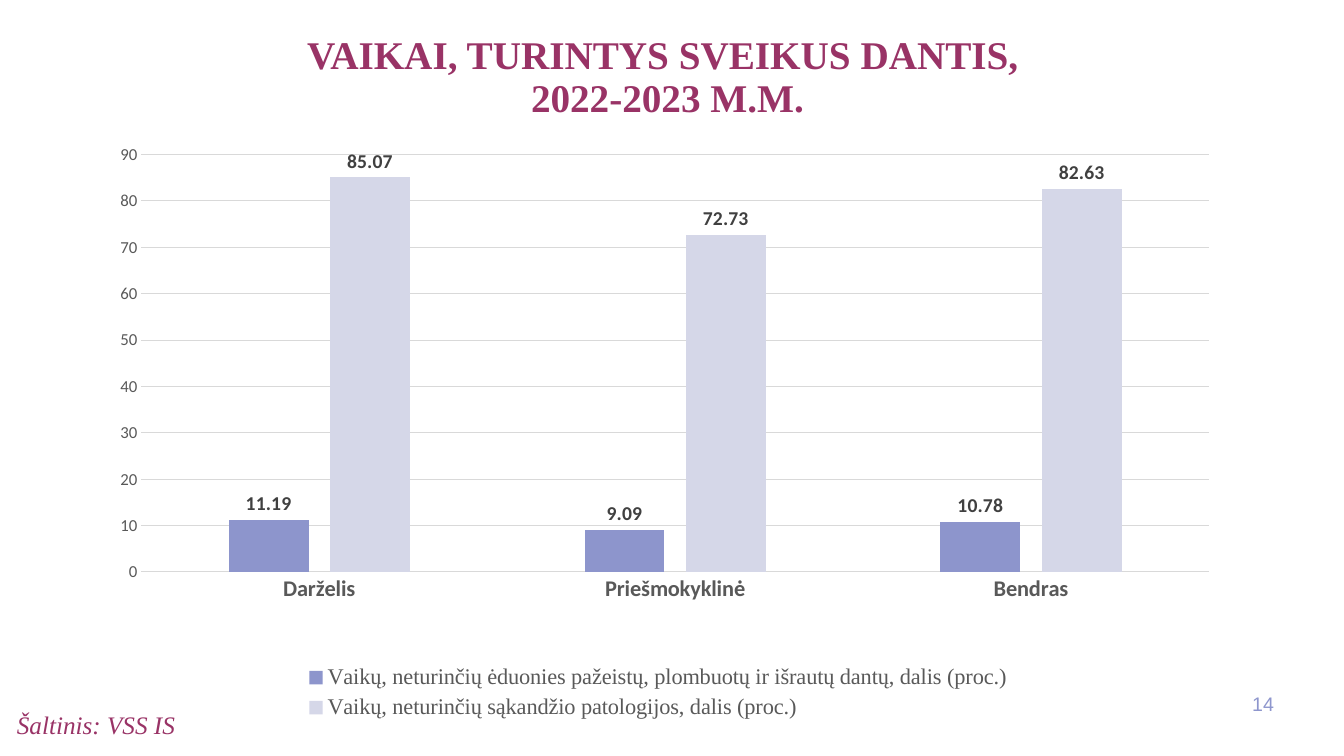
"""Build the slide on children with healthy teeth."""
from lxml import etree
from pptx import Presentation, util as u
from pptx.chart.data import CategoryChartData
from pptx.dml.color import RGBColor
from pptx.enum import chart as ch, text
from pptx.oxml import ns

PX = 914400 / 100.8
COLORS = {"plum": "993366", "periwinkle": "8E96CD", "bar": "8D95CC", "pale": "D5D7E8",
          "grid": "D9D9D9", "grey": "595959", "dark": "404040", "black": "000000"}
SERIF = "Times New Roman"
CATEGORIES = ["Darželis", "Priešmokyklinė", "Bendras"]
SERIES = [
    ("Vaikų, neturinčių ėduonies pažeistų, plombuotų ir išrautų dantų, dalis (proc.)",
     [11.19, 9.09, 10.78], "bar"),
    ("Vaikų, neturinčių sąkandžio patologijos, dalis (proc.)",
     [85.07, 72.73, 82.63], "pale"),
]


def px(n):
    """Turn pixels into EMU."""
    return u.Emu(round(n * PX))


def color(key):
    """Look up a named colour."""
    return RGBColor.from_string(COLORS[key])


def set_font(font, size, key, **fmt):
    """Apply size, colour and other format values to a font."""
    for name, value in {"size": u.Pt(size), **fmt}.items():
        setattr(font, name, value)
    font.color.rgb = color(key)


def set_line(line, key):
    """Give a chart line its colour and width."""
    line.color.rgb = color(key)
    line.width = u.Pt(0.75)


def write(sp, words, align, anchor, size, key, **fmt):
    """Fill a text shape with one formatted paragraph."""
    tf = sp.text_frame
    tf.word_wrap = True
    tf.auto_size = text.MSO_AUTO_SIZE.NONE
    tf.vertical_anchor = anchor
    tf.text = words
    p = tf.paragraphs[0]
    p.alignment = align
    for r in p.runs:
        set_font(r.font, size, key, **fmt)
    return p


def add_title(s, words, x, y, w, h):
    """Place and fill the title placeholder."""
    sp = s.shapes.title
    sp.left, sp.top, sp.width, sp.height = map(px, (x, y, w, h))
    p = write(sp, words, text.PP_ALIGN.CENTER, text.MSO_ANCHOR.TOP, 28, "plum",
              name=SERIF, bold=True)
    p.line_spacing = 0.9


def add_label(s, box, *args, **fmt):
    """Add a text box with one line."""
    write(s.shapes.add_textbox(*map(px, box)), *args, **fmt)


def set_layout(parent, index, x, y, w, h, inner=False):
    """Put a manual layout into a chart part."""
    for old in parent.findall(ns.qn("c:layout")):
        parent.remove(old)
    layout = etree.Element(ns.qn("c:layout"))
    manual = etree.SubElement(layout, ns.qn("c:manualLayout"))
    values = {"layoutTarget": "inner"} if inner else {}
    values.update(xMode="edge", yMode="edge", x=x, y=y, w=w, h=h)
    for tag, value in values.items():
        etree.SubElement(manual, ns.qn(f"c:{tag}")).set("val", str(value))
    parent.insert(index, layout)


def format_axes(chart):
    """Format both axes and the grid lines."""
    cat, val = chart.category_axis, chart.value_axis
    for axis, size, bold in ((cat, 16, True), (val, 12, False)):
        axis.major_tick_mark = axis.minor_tick_mark = ch.XL_TICK_MARK.NONE
        set_font(axis.tick_labels.font, size, "grey", name="Calibri", bold=bold)
    set_line(cat.format.line, "grid")
    val.format.line.fill.background()
    set_line(val.major_gridlines.format.line, "grid")
    val.minimum_scale, val.maximum_scale, val.major_unit = 0, 90, 10


def format_series(series, key):
    """Colour one series and show its values."""
    series.format.fill.solid()
    series.format.fill.fore_color.rgb = color(key)
    labels = series.data_labels
    labels.show_value = True
    labels.position = ch.XL_LABEL_POSITION.OUTSIDE_END
    set_font(labels.font, 14, "dark", name="Calibri", bold=True)


def add_columns(s, x, y, w, h):
    """Add the clustered column chart with its legend."""
    data = CategoryChartData()
    data.categories = CATEGORIES
    for name, values, _ in SERIES:
        data.add_series(name, values)
    chart = s.shapes.add_chart(ch.XL_CHART_TYPE.COLUMN_CLUSTERED,
                               *map(px, (x, y, w, h)), data).chart
    chart.has_title = False
    set_font(chart.font, 10, "black", name="Calibri")
    plot = chart.plots[0]
    plot.gap_width, plot.overlap, plot.vary_by_categories = 219, -27, False
    for series, (_, _, key) in zip(plot.series, SERIES):
        format_series(series, key)
    format_axes(chart)
    chart.has_legend = True
    legend = chart.legend
    legend.position = ch.XL_LEGEND_POSITION.BOTTOM
    legend.include_in_layout = False
    set_font(legend.font, 16, "grey", name=SERIF)
    area = chart.element.find(".//" + ns.qn("c:plotArea"))
    set_layout(area, 0, 0.05, 0.03, 0.93, 0.71, inner=True)
    set_layout(chart.element.find(".//" + ns.qn("c:legend")), 1, 0.19, 0.89, 0.62, 0.11)


def main():
    """Build and save the slide."""
    prs = Presentation()
    prs.slide_width, prs.slide_height = px(1344), px(756)
    s = prs.slides.add_slide(prs.slide_layouts[5])
    add_title(s, "VAIKAI, TURINTYS SVEIKUS DANTIS, \v2022-2023 M.M.", -9, 31, 1353, 120)
    add_label(s, (7, 704, 635, 38), "Šaltinis: VSS IS", text.PP_ALIGN.LEFT,
              text.MSO_ANCHOR.TOP, 18, "plum", name=SERIF, italic=True)
    add_label(s, (1232, 684, 52, 40), "14", text.PP_ALIGN.RIGHT,
              text.MSO_ANCHOR.MIDDLE, 14, "periwinkle", name="Arial")
    add_columns(s, 84, 137, 1148, 588)
    prs.save("out.pptx")


if __name__ == "__main__":
    main()
